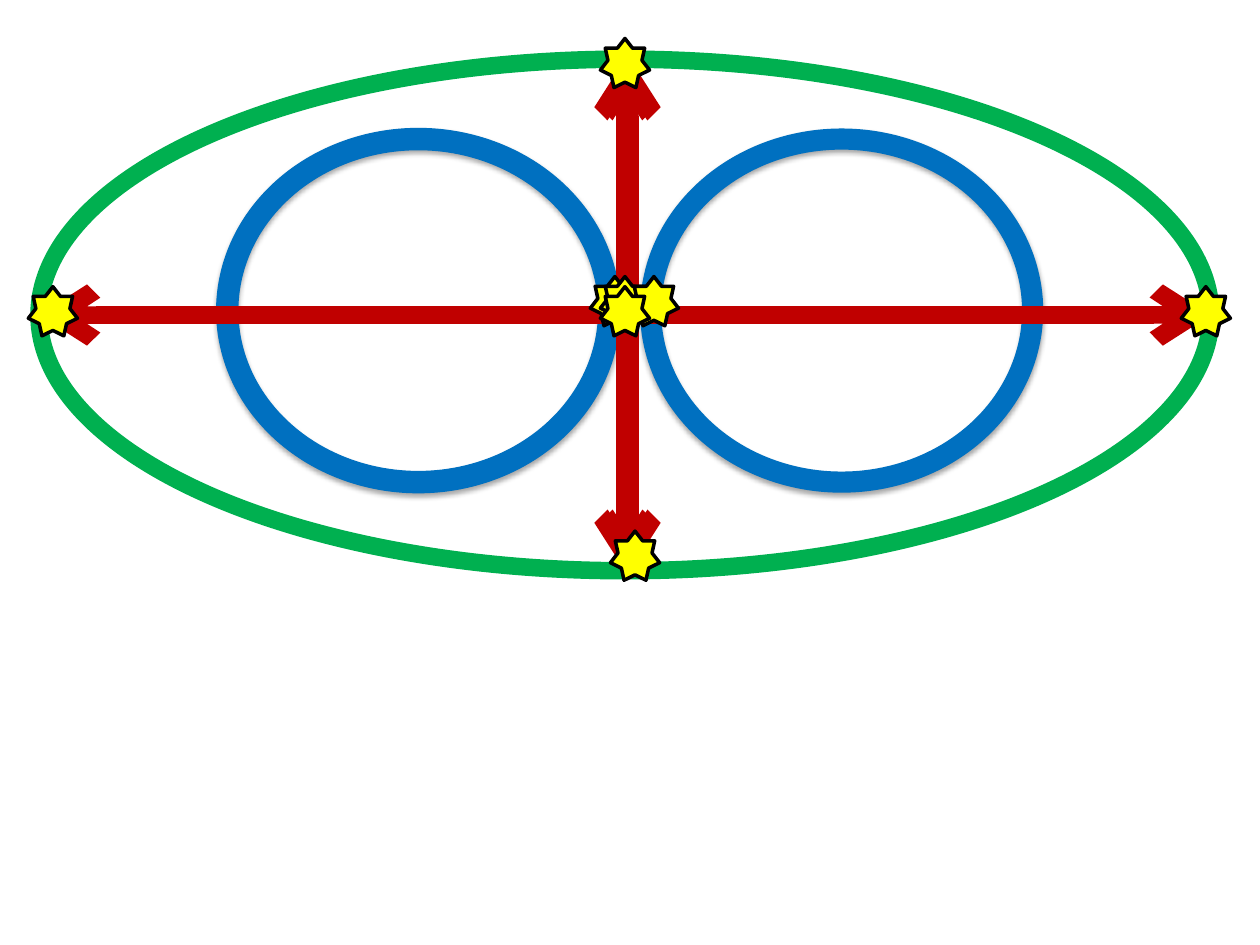
from pptx import Presentation
from pptx.dml.color import RGBColor
from pptx.enum.shapes import MSO_CONNECTOR, MSO_SHAPE
from pptx.oxml import parse_xml
from pptx.oxml.ns import nsdecls
from pptx.util import Inches, Pt

GREEN, BLUE, RED = "00B050", "0070C0", "C00000"
YELLOW, BLACK, WHITE = "FFFF00", "000000", "FFFFFF"
STAR_SIZE = 0.39


def rgb(hex_color):
    return RGBColor.from_string(hex_color)


def add_outline(line, color, width):
    line.color.rgb = rgb(color)
    line.width = Pt(width)


def add_figure(slide, kind, left, top, width, height, fill, outline=None):
    figure = slide.shapes.add_shape(
        kind, Inches(left), Inches(top), Inches(width), Inches(height))
    figure.shadow.inherit = False
    figure.fill.solid()
    figure.fill.fore_color.rgb = rgb(fill)
    if outline:
        add_outline(figure.line, *outline)
    else:
        figure.line.fill.background()
    return figure


def add_double_arrow(slide, start, end):
    arrow = slide.shapes.add_connector(
        MSO_CONNECTOR.STRAIGHT, *(Inches(v) for v in (*start, *end)))
    add_outline(arrow.line, RED, 10)
    properties = arrow._element.spPr
    outline = properties.get_or_add_ln()
    for tip in ("headEnd", "tailEnd"):
        outline.append(parse_xml(f'<a:{tip} {nsdecls("a")} type="arrow"/>'))
    properties.append(parse_xml(f'<a:effectLst {nsdecls("a")}/>'))


def add_soft_shadow(figure):
    effects = figure._element.spPr.find(
        "{http://schemas.openxmlformats.org/drawingml/2006/main}effectLst")
    effects.append(parse_xml(
        f'<a:outerShdw {nsdecls("a")} blurRad="{Pt(3.1)}" dist="{Pt(1.8)}" '
        'dir="5400000" rotWithShape="0"><a:srgbClr val="000000">'
        '<a:alpha val="35000"/></a:srgbClr></a:outerShdw>'))


def add_field(slide, left, top, width, height):
    # Outer ellipse
    add_figure(slide, MSO_SHAPE.OVAL, left, top, width, height,
               WHITE, (GREEN, 10))

    # Pair of rings
    for offset, outline in ((1.41, (BLUE, 0.75)), (4.77, None)):
        ring = add_figure(slide, MSO_SHAPE.DONUT, left + offset, top + 0.55,
                          3.2, 2.89, BLUE, outline)
        ring.adjustments[0] = 0.058
        add_soft_shadow(ring)

    # Vertical arrows, then the horizontal one
    middle = left + width / 2
    for x in (middle, middle + 0.04):
        add_double_arrow(slide, (x, top), (x, top + height))
    axis = top + height / 2
    add_double_arrow(slide, (left + width, axis), (left, axis))


def add_stars(slide, left, top, width, height):
    # Centres as offsets from the middle of the box
    reach_x, reach_y = width / 2, height / 2
    centers = [
        (-0.08, -0.11), (0, -0.11), (0, -reach_y + 0.03), (0.23, -0.11),
        (0, -0.03), (reach_x - 0.04, -0.03), (0.08, reach_y - 0.12),
        (-reach_x + 0.11, -0.03),
    ]
    for dx, dy in centers:
        add_figure(slide, MSO_SHAPE.STAR_7_POINT,
                   left + reach_x + dx - STAR_SIZE / 2,
                   top + reach_y + dy - STAR_SIZE / 2,
                   STAR_SIZE, STAR_SIZE, YELLOW, (BLACK, 2))


def main():
    deck = Presentation()
    deck.slide_width, deck.slide_height = Inches(10), Inches(7.5)
    slide = deck.slides.add_slide(deck.slide_layouts[6])
    field_box = (0.31, 0.47, 9.3, 4.06)
    add_field(slide, *field_box)
    add_stars(slide, *field_box)
    deck.save("out.pptx")


if __name__ == "__main__":
    main()
